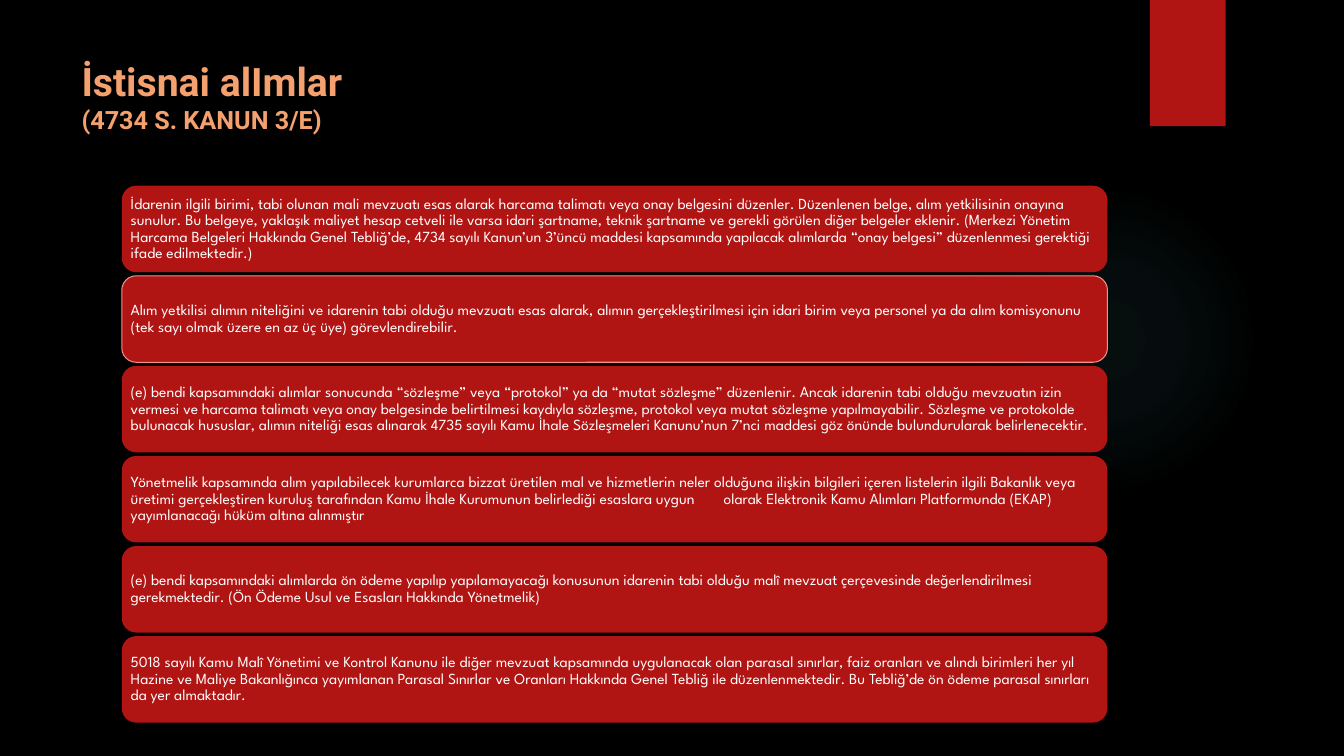
from lxml import etree
from pptx import Presentation
from pptx.dml.color import RGBColor
from pptx.enum.shapes import MSO_SHAPE
from pptx.enum.text import MSO_ANCHOR, MSO_AUTO_SIZE, PP_ALIGN
from pptx.oxml import parse_xml
from pptx.oxml.ns import nsdecls, qn
from pptx.util import Cm, Pt

ELLIPSE = MSO_SHAPE.OVAL
RECTANGLE = MSO_SHAPE.RECTANGLE
ROUNDED = MSO_SHAPE.ROUNDED_RECTANGLE
TOP = MSO_ANCHOR.TOP
MIDDLE = MSO_ANCHOR.MIDDLE
LEFT = PP_ALIGN.LEFT
NO_AUTOFIT = MSO_AUTO_SIZE.NONE

BLACK = "000000"
RED = "B01513"
ORANGE = "F4A16F"
PINK = "F38F8D"
WHITE = "FFFFFF"
TEAL = "50B9C1"

TITLE_LINES = [("İstisnai alImlar", 28), ("(4734 S. KANUN 3/E)", 18)]
HIGHLIGHTED_CARD = 1
TAB_STOP = 14.94
CARD_TEXTS = [
    "İdarenin ilgili birimi, tabi olunan mali mevzuatı esas alarak harcama talimatı veya onay "
    "belgesini düzenler. Düzenlenen belge, alım yetkilisinin onayına sunulur. Bu belgeye, yaklaşık "
    "maliyet hesap cetveli ile varsa idari şartname, teknik şartname ve gerekli görülen diğer "
    "belgeler eklenir. (Merkezi Yönetim Harcama Belgeleri Hakkında Genel Tebliğ’de, 4734 sayılı "
    "Kanun’un 3’üncü maddesi kapsamında yapılacak alımlarda “onay belgesi” düzenlenmesi gerektiği "
    "ifade edilmektedir.)",
    "Alım yetkilisi alımın niteliğini ve idarenin tabi olduğu mevzuatı esas alarak, alımın "
    "gerçekleştirilmesi için idari birim veya personel ya da alım komisyonunu (tek sayı olmak "
    "üzere en az üç üye) görevlendirebilir.",
    "(e) bendi kapsamındaki alımlar sonucunda “sözleşme” veya “protokol” ya da “mutat sözleşme” "
    "düzenlenir. Ancak idarenin tabi olduğu mevzuatın izin vermesi ve harcama talimatı veya onay "
    "belgesinde belirtilmesi kaydıyla sözleşme, protokol veya mutat sözleşme yapılmayabilir. "
    "Sözleşme ve protokolde bulunacak hususlar, alımın niteliği esas alınarak 4735 sayılı Kamu "
    "İhale Sözleşmeleri Kanunu’nun 7’nci maddesi göz önünde bulundurularak belirlenecektir.",
    "Yönetmelik kapsamında alım yapılabilecek kurumlarca bizzat üretilen mal ve hizmetlerin neler "
    "olduğuna ilişkin bilgileri içeren listelerin ilgili Bakanlık veya üretimi gerçekleştiren "
    "kuruluş tarafından Kamu İhale Kurumunun belirlediği esaslara uygun\tolarak Elektronik Kamu "
    "Alımları Platformunda (EKAP) yayımlanacağı hüküm altına alınmıştır",
    "(e) bendi kapsamındaki alımlarda ön ödeme yapılıp yapılamayacağı konusunun idarenin tabi "
    "olduğu malî mevzuat çerçevesinde değerlendirilmesi gerekmektedir. (Ön Ödeme Usul ve Esasları "
    "Hakkında Yönetmelik)",
    "5018 sayılı Kamu Malî Yönetimi ve Kontrol Kanunu ile diğer mevzuat kapsamında uygulanacak "
    "olan parasal sınırlar, faiz oranları ve alındı birimleri her yıl Hazine ve Maliye "
    "Bakanlığınca yayımlanan Parasal Sınırlar ve Oranları Hakkında Genel Tebliğ ile "
    "düzenlenmektedir. Bu Tebliğ’de ön ödeme parasal sınırları da yer almaktadır.",
]


def color(hex_string):
    return RGBColor.from_string(hex_string)


def add_text(paragraph, text, *, font, size, fill, bold=False):
    run = paragraph.add_run()
    run.text = text
    run.font.name = font
    run.font.size = Pt(size)
    run.font.bold = bold
    run.font.color.rgb = color(fill)


def add_box(slide, kind, left, top, width, height, fill, line=None):
    shape = slide.shapes.add_shape(kind, Cm(left), Cm(top), Cm(width), Cm(height))
    shape.shadow.inherit = False
    shape.fill.solid()
    shape.fill.fore_color.rgb = color(fill)
    if line:
        shape.line.color.rgb = color(line)
        shape.line.width = Pt(0.75)
    else:
        shape.line.fill.background()
    return shape


def add_glow(slide, left, top, size):
    shape = add_box(slide, ELLIPSE, left, top, size, size, TEAL)
    stops = "".join(
        f'<a:gs pos="{position * 1000}"><a:srgbClr val="{TEAL}">'
        f'<a:alpha val="{opacity * 1000}"/></a:srgbClr></a:gs>'
        for position, opacity in [(0, 7), (36, 6), (69, 0)]
    )
    gradient = parse_xml(
        f'<a:gradFill {nsdecls("a")}><a:gsLst>{stops}</a:gsLst><a:path path="circle">'
        '<a:fillToRect l="50000" t="50000" r="50000" b="50000"/></a:path></a:gradFill>'
    )
    properties = shape.element.spPr
    properties.replace(properties.find(qn("a:solidFill")), gradient)


def add_title(slide, left, top, width, height):
    title = slide.shapes.title
    title.left, title.top = Cm(left), Cm(top)
    title.width, title.height = Cm(width), Cm(height)
    frame = title.text_frame
    frame.auto_size = NO_AUTOFIT
    frame.vertical_anchor = TOP
    frame.margin_top = Cm(0.18)
    paragraph = frame.paragraphs[0]
    paragraph.alignment = LEFT
    for index, (text, size) in enumerate(TITLE_LINES):
        if index:
            paragraph.add_line_break()
        add_text(paragraph, text, font="Roboto", size=size, fill=ORANGE, bold=True)


def add_tab_stop(paragraph, position):
    tabs = etree.SubElement(paragraph._p.get_or_add_pPr(), qn("a:tabLst"))
    etree.SubElement(tabs, qn("a:tab"), pos=str(Cm(position)), algn="l")


def add_card(slide, text, left, top, width, height, line):
    card = add_box(slide, ROUNDED, left, top, width, height, RED, line)
    frame = card.text_frame
    frame.word_wrap = True
    frame.vertical_anchor = MIDDLE
    frame.margin_left = frame.margin_right = Cm(0.12)
    frame.margin_top = frame.margin_bottom = Cm(0.12)
    paragraph = frame.paragraphs[0]
    paragraph.alignment = LEFT
    paragraph.line_spacing = 0.9
    if "\t" in text:
        add_tab_stop(paragraph, TAB_STOP)
    add_text(paragraph, text, font="League Spartan", size=11, fill=WHITE)


def add_cards(slide, left, top, width, height, gap=0.09):
    card_height = (height - gap * (len(CARD_TEXTS) - 1)) / len(CARD_TEXTS)
    for index, text in enumerate(CARD_TEXTS):
        card_top = top + index * (card_height + gap)
        line = PINK if index == HIGHLIGHTED_CARD else None
        add_card(slide, text, left, card_top, width, card_height, line)


def main():
    presentation = Presentation()
    presentation.slide_width = Cm(33.87)
    presentation.slide_height = Cm(19.05)
    slide = presentation.slides.add_slide(presentation.slide_layouts[5])
    slide.background.fill.solid()
    slide.background.fill.fore_color.rgb = color(BLACK)
    add_glow(slide, 23.9, 4.65, 7.82)
    add_box(slide, RECTANGLE, 28.98, 0, 1.91, 3.18, RED)
    add_title(slide, 1.8, 1.27, 26.14, 3.89)
    add_cards(slide, 3.07, 4.68, 24.84, 13.53)
    presentation.save("out.pptx")


if __name__ == "__main__":
    main()
